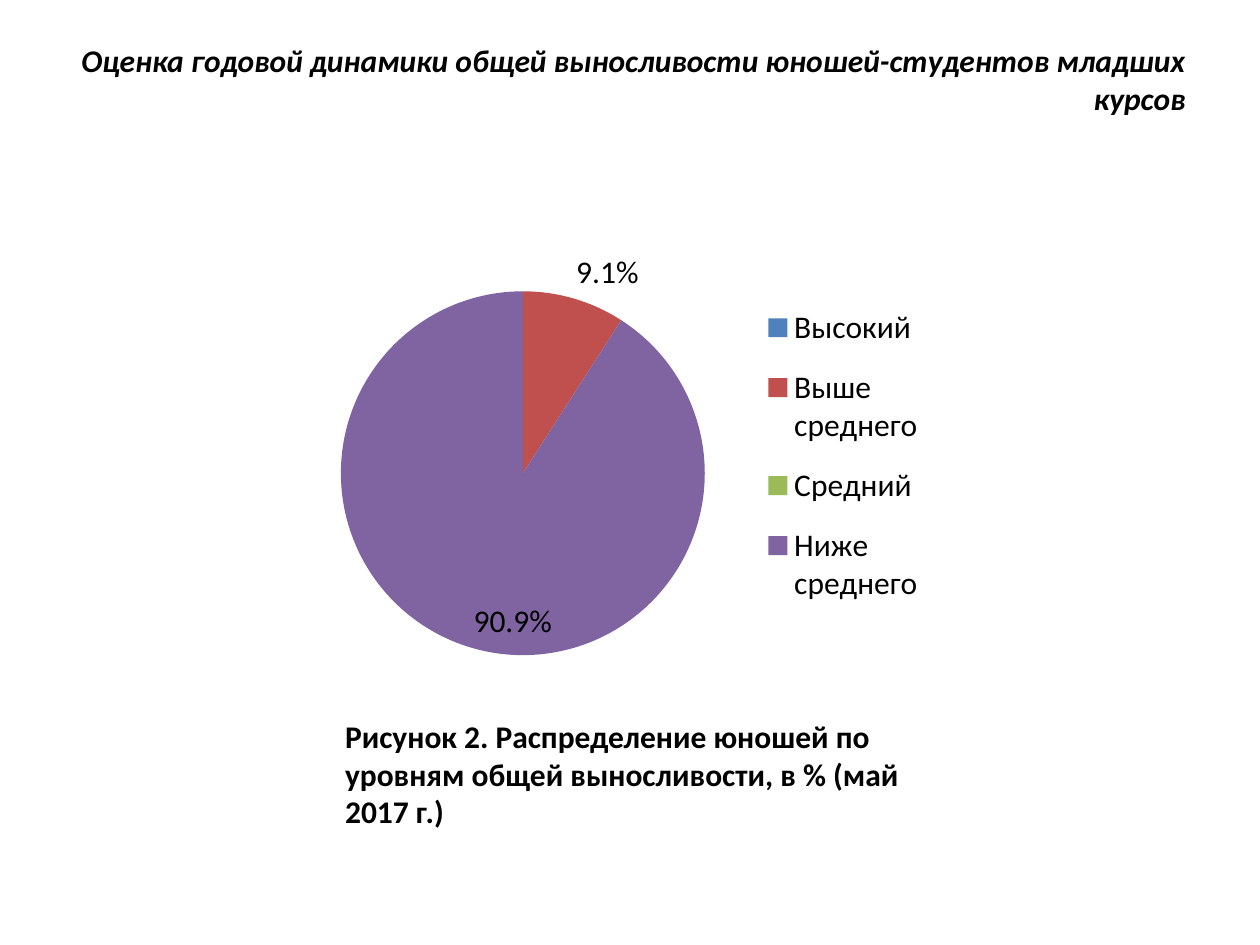
"""Build a slide with a pie chart of endurance levels, its caption and a title."""
from lxml import etree
from pptx import Presentation
from pptx import util as u
from pptx.chart.data import CategoryChartData
from pptx.dml.color import RGBColor
from pptx.enum import chart as ch, text
from pptx.oxml import ns

FONT = "Calibri"
SIZE = u.Pt(18)


def color(value):
    return RGBColor.from_string(value)


def add_text(slide, content, left, top, width, height, italic=False,
             align=text.PP_ALIGN.LEFT, anchor=text.MSO_ANCHOR.TOP):
    box = slide.shapes.add_textbox(*map(u.Inches, (left, top, width, height)))
    box.text_frame.word_wrap = True
    box.text_frame.vertical_anchor = anchor
    paragraph = box.text_frame.paragraphs[0]
    paragraph.alignment = align
    run = paragraph.add_run()
    run.text = content
    run.font.name, run.font.size = FONT, SIZE
    run.font.bold, run.font.italic = True, italic
    run.font.color.rgb = color("000000")


presentation = Presentation()
presentation.slide_width = u.Inches(10)
presentation.slide_height = u.Inches(7.5)
slide = presentation.slides.add_slide(presentation.slide_layouts[6])

levels = [
    ("Высокий", 0, "4F81BD"),
    ("Выше среднего", 9.1, "C0504D"),
    ("Средний", 0, "9BBB59"),
    ("Ниже среднего", 90.9, "8064A2"),
]
data = CategoryChartData()
data.categories = [name for name, _, _ in levels]
data.add_series("Series 1", [value for _, value, _ in levels])
chart = slide.shapes.add_chart(
    ch.XL_CHART_TYPE.PIE, u.Inches(2.17), u.Inches(1.86), u.Inches(5.35), u.Inches(3.48), data
).chart
chart.has_title = False
chart.font.name, chart.font.size = FONT, SIZE
chart.font.color.rgb = color("000000")
chart.has_legend = True
chart.legend.position = ch.XL_LEGEND_POSITION.RIGHT
chart.legend.include_in_layout = False

plot = chart.plots[0]
plot.vary_by_categories = True
series = plot.series[0]
labels = series.data_labels
labels.show_percentage = True
labels.show_value = False
labels.number_format = "0.0%"
labels.number_format_is_linked = False
labels.position = ch.XL_LABEL_POSITION.OUTSIDE_END

flags = {"dLblPos": "inEnd", "showLegendKey": "0", "showVal": "0", "showCatName": "0",
         "showSerName": "0", "showPercent": "1", "showBubbleSize": "0"}
labels_xml = series._element.find(ns.qn("c:dLbls"))
inner_labels = 0
for index, (_, value, fill) in enumerate(levels):
    point = series.points[index]
    point.format.fill.solid()
    point.format.fill.fore_color.rgb = color(fill)
    if 0 < value < 50:
        continue
    label = etree.Element(ns.qn("c:dLbl"))
    etree.SubElement(label, ns.qn("c:idx"), val=str(index))
    if value:
        etree.SubElement(label, ns.qn("c:numFmt"), formatCode="0.0%", sourceLinked="0")
    for tag, setting in (flags if value else {"delete": "1"}).items():
        etree.SubElement(label, ns.qn(f"c:{tag}"), val=setting)
    labels_xml.insert(inner_labels, label)
    inner_labels += 1

plot_area = chart._chartSpace.chart.plotArea
legend = chart.legend._element
for parent, position, target, box in (
    (plot_area, 0, "inner", (0.1, 0.13, 0.54, 0.83)),
    (legend, 1, None, (0.7, 0.12, 0.29, 0.77)),
):
    for old in parent.findall(ns.qn("c:layout")):
        parent.remove(old)
    layout = etree.Element(ns.qn("c:layout"))
    manual = etree.SubElement(layout, ns.qn("c:manualLayout"))
    if target:
        etree.SubElement(manual, ns.qn("c:layoutTarget"), val=target)
    for tag in ("xMode", "yMode"):
        etree.SubElement(manual, ns.qn(f"c:{tag}"), val="edge")
    for tag, share in zip("xywh", box):
        etree.SubElement(manual, ns.qn(f"c:{tag}"), val=str(share))
    parent.insert(position, layout)

add_text(slide, "Рисунок 2. Распределение юношей по уровням общей выносливости, в % (май 2017 г.)",
         2.64, 5.64, 5.01, 1.31)
add_text(slide, "Оценка годовой динамики общей выносливости юношей-студентов младших курсов",
         0.43, 0, 9.08, 1.25, italic=True,
         align=text.PP_ALIGN.RIGHT, anchor=text.MSO_ANCHOR.MIDDLE)

presentation.save("out.pptx")
